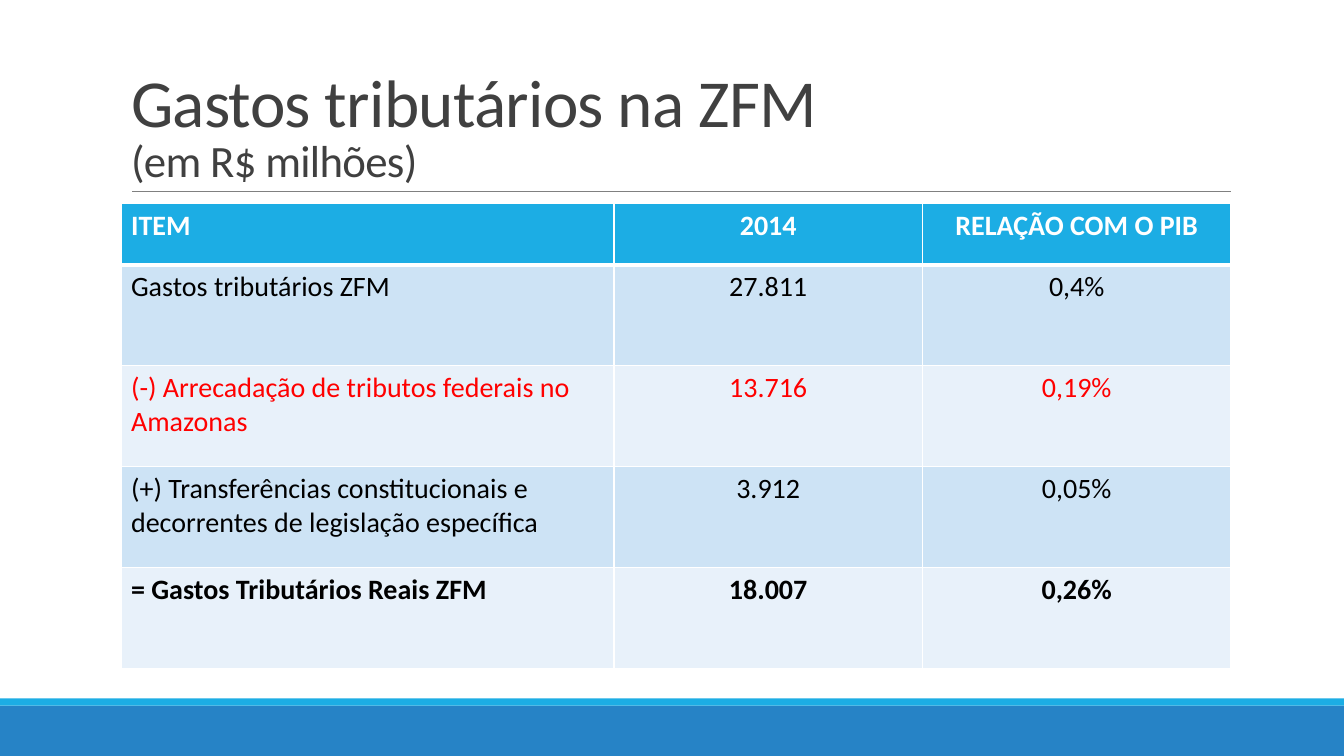
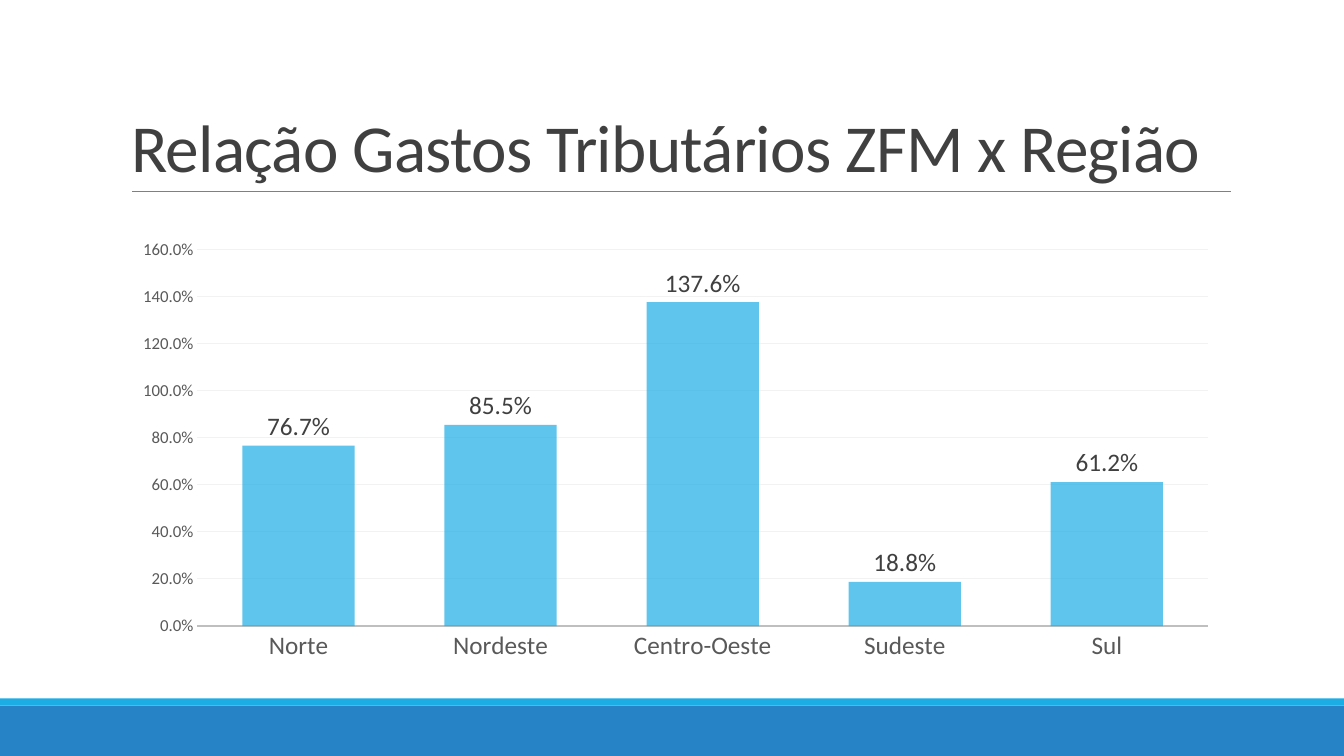
from lxml.etree import SubElement
from pptx import Presentation
from pptx.chart.data import CategoryChartData
from pptx.dml.color import RGBColor
from pptx.enum.chart import XL_CHART_TYPE, XL_LABEL_POSITION, XL_TICK_MARK
from pptx.enum.shapes import MSO_CONNECTOR, MSO_SHAPE
from pptx.enum.text import MSO_ANCHOR, MSO_AUTO_SIZE, PP_ALIGN
from pptx.oxml.ns import qn
from pptx.util import Inches, Pt

FONT = "Calibri"
CYAN, BLUE, WHITE, BLACK, RED = "1CADE4", "2683C6", "FFFFFF", "000000", "FF0000"
TITLE_GRAY, AXIS_GRAY, RULE_GRAY = "404040", "595959", "808080"
ROW_FILLS = ("CDE3F5", "E8F1FA")
LEFT, WIDTH = 1.2, 11

TABLE_TITLE = [("Gastos tributários na ZFM", 48), ("(em R$ milhões)", 32)]
TABLE_ROWS = [
    (("ITEM", "2014", "RELAÇÃO COM O PIB"), WHITE, True),
    (("Gastos tributários ZFM", "27.811", "0,4%"), BLACK, False),
    (("(-) Arrecadação de tributos federais no Amazonas", "13.716", "0,19%"), RED, False),
    (("(+) Transferências constitucionais e decorrentes de legislação específica",
      "3.912", "0,05%"), BLACK, False),
    (("= Gastos Tributários Reais ZFM", "18.007", "0,26%"), BLACK, True),
]
COL_WIDTHS = (4.89, 3.06, 3.06)
ROW_HEIGHTS = (0.61, 1, 1, 1, 1)

CHART_TITLE = [("Relação Gastos Tributários ZFM x Região", 48)]
REGIONS = {"Norte": 0.767, "Nordeste": 0.855, "Centro-Oeste": 1.376,
           "Sudeste": 0.188, "Sul": 0.612}


def rgb(color):
    return RGBColor.from_string(color)


def box(*lengths):
    return [Inches(n) for n in lengths]


def style_font(font, size, color, bold=False):
    font.name, font.size, font.bold = FONT, Pt(size), bold
    font.color.rgb = rgb(color)


def style_line(line, color, width):
    line.color.rgb = rgb(color)
    line.width = Pt(width)


def build_layout(layout, s):
    title = layout.placeholders[0]
    title.left, title.top, title.width, title.height = box(LEFT, 0.31, WIDTH, 1.59)
    tf = title.text_frame
    tf.vertical_anchor = MSO_ANCHOR.BOTTOM
    tf.auto_size = MSO_AUTO_SIZE.NONE
    parts = []
    for top, height, color in ((7, 0.5, BLUE), (6.93, 0.07, CYAN)):
        band = s.shapes.add_shape(MSO_SHAPE.RECTANGLE, *box(0, top, 13.33, height))
        band.shadow.inherit = False
        band.fill.solid()
        band.fill.fore_color.rgb = rgb(color)
        band.line.fill.background()
        parts.append(band)
    rule = s.shapes.add_connector(MSO_CONNECTOR.STRAIGHT, *box(1.31, 1.9, 12.21, 1.9))
    style_line(rule.line, RULE_GRAY, 0.5)
    SubElement(rule.element.spPr, qn("a:effectLst"))
    for part in parts + [rule]:
        layout.shapes.element.append(part.element)


def set_title(s, lines):
    tf = s.shapes.title.text_frame
    p = tf.paragraphs[0]
    p.text = "\v".join(text for text, size in lines)
    p.alignment = PP_ALIGN.LEFT
    p.line_spacing = 0.85
    for r, (text, size) in zip(p.runs, lines):
        style_font(r.font, size, TITLE_GRAY)
        r.font.element.set("spc", "-50") if hasattr(r.font, "element") else r._r.get_or_add_rPr().set("spc", "-50")


def set_borders(cell, bottom):
    tc_pr = cell._tc.get_or_add_tcPr()
    for side, width in (("L", 1), ("R", 1), ("T", 1), ("B", bottom)):
        ln = SubElement(tc_pr, qn(f"a:ln{side}"), w=str(Pt(width)))
        SubElement(SubElement(ln, qn("a:solidFill")), qn("a:srgbClr"), val=WHITE)


def add_spending_table(s):
    table = s.shapes.add_table(len(TABLE_ROWS), len(COL_WIDTHS),
                               *box(LEFT, 2.02, WIDTH, sum(ROW_HEIGHTS))).table
    for column, width in zip(table.columns, COL_WIDTHS):
        column.width = Inches(width)
    for i, (texts, color, bold) in enumerate(TABLE_ROWS):
        table.rows[i].height = Inches(ROW_HEIGHTS[i])
        for j, text in enumerate(texts):
            cell = table.cell(i, j)
            set_borders(cell, 1 if i else 3)
            cell.fill.solid()
            cell.fill.fore_color.rgb = rgb(ROW_FILLS[(i - 1) % 2] if i else CYAN)
            p = cell.text_frame.paragraphs[0]
            p.text = text
            p.alignment = PP_ALIGN.CENTER if j else PP_ALIGN.LEFT
            style_font(p.runs[0].font, 20, color, bold)


def add_region_chart(s):
    data = CategoryChartData(number_format="0.0%")
    data.categories = list(REGIONS)
    data.add_series("Series 1", list(REGIONS.values()))
    chart = s.shapes.add_chart(XL_CHART_TYPE.COLUMN_CLUSTERED,
                               *box(LEFT, 2.29, WIDTH, 4.35), data).chart
    chart.has_legend = chart.has_title = False
    style_font(chart.font, 10, BLACK)

    regions, shares = chart.category_axis, chart.value_axis
    for axis, size in ((regions, 18), (shares, 12)):
        axis.major_tick_mark = axis.minor_tick_mark = XL_TICK_MARK.NONE
        style_font(axis.tick_labels.font, size, AXIS_GRAY)
    style_line(regions.format.line, "BFBFBF", 1.25)
    shares.format.line.fill.background()
    shares.minimum_scale, shares.maximum_scale, shares.major_unit = 0, 1.6, 0.2
    shares.tick_labels.number_format = "0.0%"
    shares.tick_labels.number_format_is_linked = False
    style_line(shares.major_gridlines.format.line, "F2F2F2", 0.75)

    plot = chart.plots[0]
    plot.gap_width, plot.overlap, plot.vary_by_categories = 80, 25, False
    fill = plot.series[0].format.fill
    fill.solid()
    fill.fore_color.rgb = rgb(CYAN)
    bar_color = plot.series[0].format.element.find(".//" + qn("a:srgbClr")) \
        if hasattr(plot.series[0].format, "element") \
        else plot.series[0]._element.find(".//" + qn("a:srgbClr"))
    SubElement(bar_color, qn("a:alpha"), val="70000")
    plot.has_data_labels = True
    labels = plot.data_labels
    labels.show_value = True
    labels.position = XL_LABEL_POSITION.OUTSIDE_END
    labels.number_format, labels.number_format_is_linked = "0.0%", False
    style_font(labels.font, 18, TITLE_GRAY)


def main():
    prs = Presentation()
    prs.slide_width, prs.slide_height = box(13.33, 7.5)
    layout = prs.slide_layouts[5]
    slides = [prs.slides.add_slide(layout) for _ in range(2)]
    build_layout(layout, slides[0])
    contents = ((TABLE_TITLE, add_spending_table), (CHART_TITLE, add_region_chart))
    for s, (title, add_content) in zip(slides, contents):
        set_title(s, title)
        add_content(s)
    prs.save("out.pptx")


if __name__ == "__main__":
    main()
